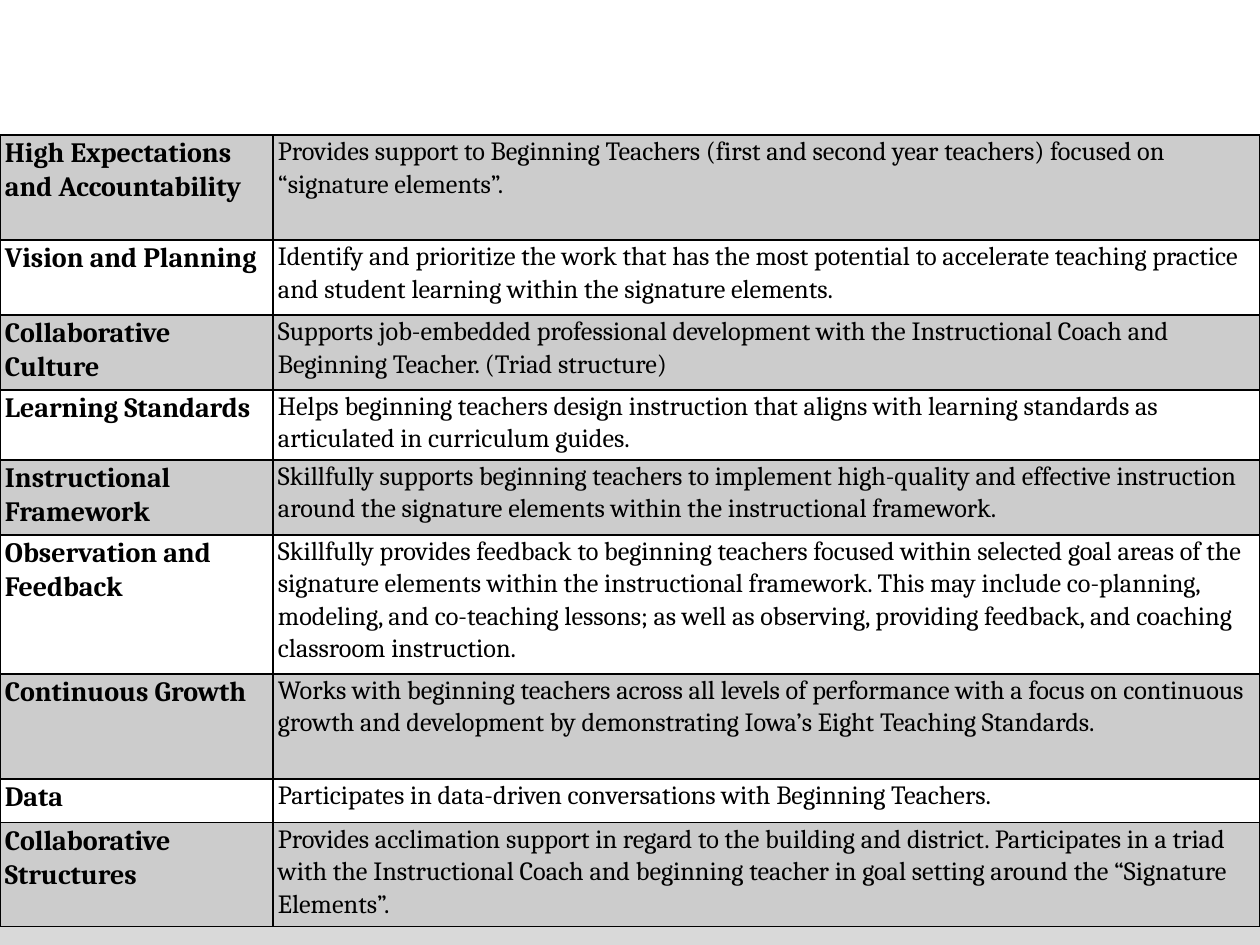
"""Build the mentor roles and responsibilities slide."""
import pptx
import pptx.dml.color
import pptx.enum.shapes
import pptx.oxml
import pptx.oxml.ns
import pptx.util

THEME = {
    "font": "Cambria", "role_size": 16, "duty_size": 15,
    "text": "000000", "border": "000000",
    "band": "CCCCCC", "footer": "D9D9D9",
}
ROLES = [
    (105, "High Expectations and Accountability",
     "Provides support to Beginning Teachers (first and second year teachers) focused on “signature elements”."),
    (75, "Vision and Planning",
     "Identify and prioritize the work that has the most potential to accelerate teaching practice "
     "and student learning within the signature elements."),
    (75, "Collaborative Culture",
     "Supports job-embedded professional development with the Instructional Coach and "
     "Beginning Teacher. (Triad structure)"),
    (70, "Learning Standards",
     "Helps beginning teachers design instruction that aligns with learning standards as "
     "articulated in curriculum guides."),
    (75, "Instructional Framework",
     "Skillfully supports beginning teachers to implement high-quality and effective instruction "
     "around the signature elements within the instructional framework."),
    (139, "Observation and Feedback",
     "Skillfully provides feedback to beginning teachers focused within selected goal areas of the "
     "signature elements within the instructional framework. This may include co-planning, "
     "modeling, and co-teaching lessons; as well as observing, providing feedback, and coaching "
     "classroom instruction."),
    (105, "Continuous Growth",
     "Works with beginning teachers across all levels of performance with a focus on continuous "
     "growth and development by demonstrating Iowa’s Eight Teaching Standards."),
    (44, "Data", "Participates in data-driven conversations with Beginning Teachers."),
    (104, "Collaborative Structures",
     "Provides acclimation support in regard to the building and district. Participates in a triad "
     "with the Instructional Coach and beginning teacher in goal setting around the “Signature "
     "Elements”."),
]
COLUMN_WIDTHS = (273, 987)


def px(length):
    return pptx.util.Emu(round(length * 914400 / 126))


def color(name):
    return pptx.dml.color.RGBColor.from_string(THEME[name])


presentation = pptx.Presentation()
presentation.slide_width = px(1260)
presentation.slide_height = px(945)
slide = presentation.slides.add_slide(presentation.slide_layouts[6])

footer = slide.shapes.add_shape(
    pptx.enum.shapes.MSO_SHAPE.RECTANGLE, px(0), px(868), px(1260), px(77))
footer.shadow.inherit = False
footer.fill.solid()
footer.fill.fore_color.rgb = color("footer")
footer.line.fill.background()

table_height = sum(height for height, role, duty in ROLES)
table = slide.shapes.add_table(
    len(ROLES), len(COLUMN_WIDTHS), px(0), px(135), px(1260), px(table_height)).table
table.first_row = False
table.horz_banding = False
for column, width in zip(table.columns, COLUMN_WIDTHS):
    column.width = px(width)

for row_index, (height, role, duty) in enumerate(ROLES):
    table.rows[row_index].height = px(height)
    for column_index, text in enumerate((role, duty)):
        cell = table.cell(row_index, column_index)
        cell.margin_left = cell.margin_right = px(5)
        cell.margin_top = cell.margin_bottom = 0
        cell_properties = cell._tc.get_or_add_tcPr()
        for side in ("lnL", "lnR", "lnT", "lnB"):
            cell_properties.append(pptx.oxml.parse_xml(
                f'<a:{side} {pptx.oxml.ns.nsdecls("a")} w="12700"><a:solidFill>'
                f'<a:srgbClr val="{THEME["border"]}"/></a:solidFill></a:{side}>'))
        if row_index % 2 == 0:
            cell.fill.solid()
            cell.fill.fore_color.rgb = color("band")
        else:
            cell.fill.background()
        cell.text_frame.text = text
        paragraph = cell.text_frame.paragraphs[0]
        paragraph.line_spacing = 1.07
        is_role = column_index == 0
        for run in paragraph.runs:
            run.font.name = THEME["font"]
            run.font.size = pptx.util.Pt(THEME["role_size"] if is_role else THEME["duty_size"])
            run.font.bold = is_role
            run.font.color.rgb = color("text")

presentation.save("out.pptx")
